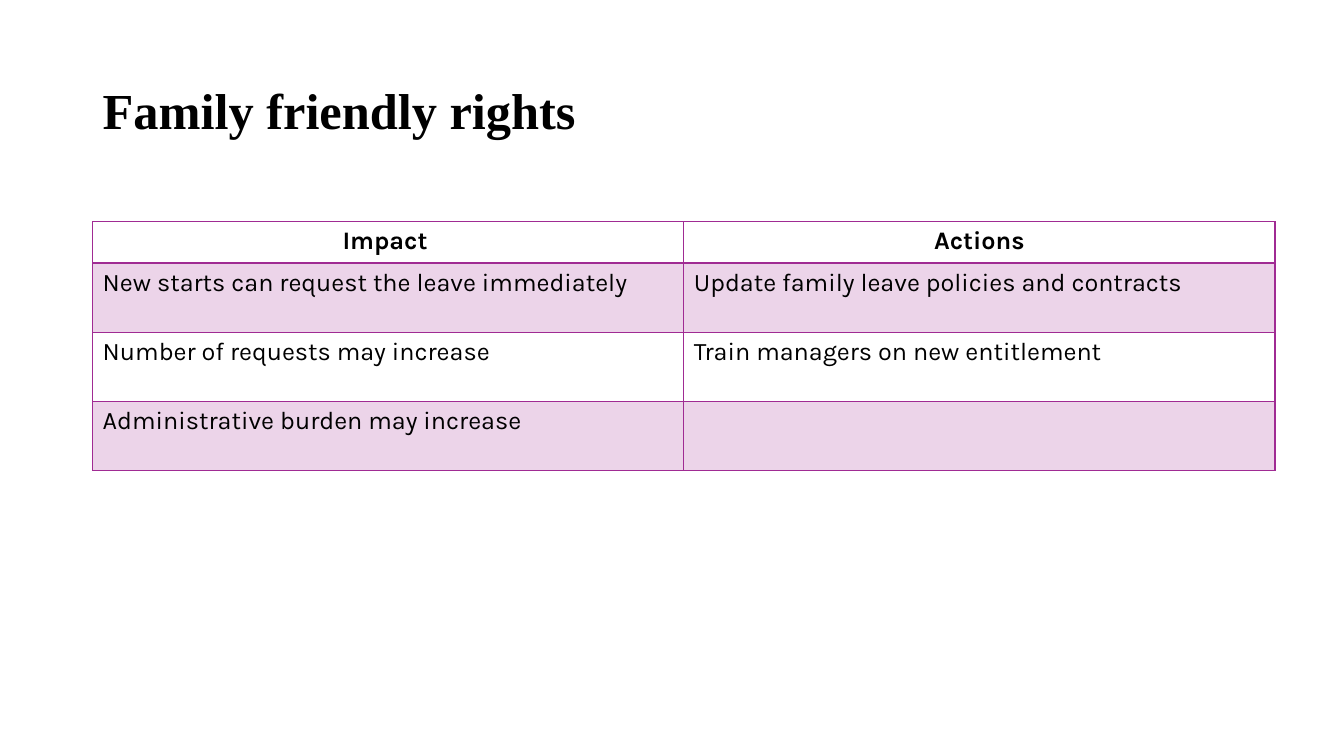
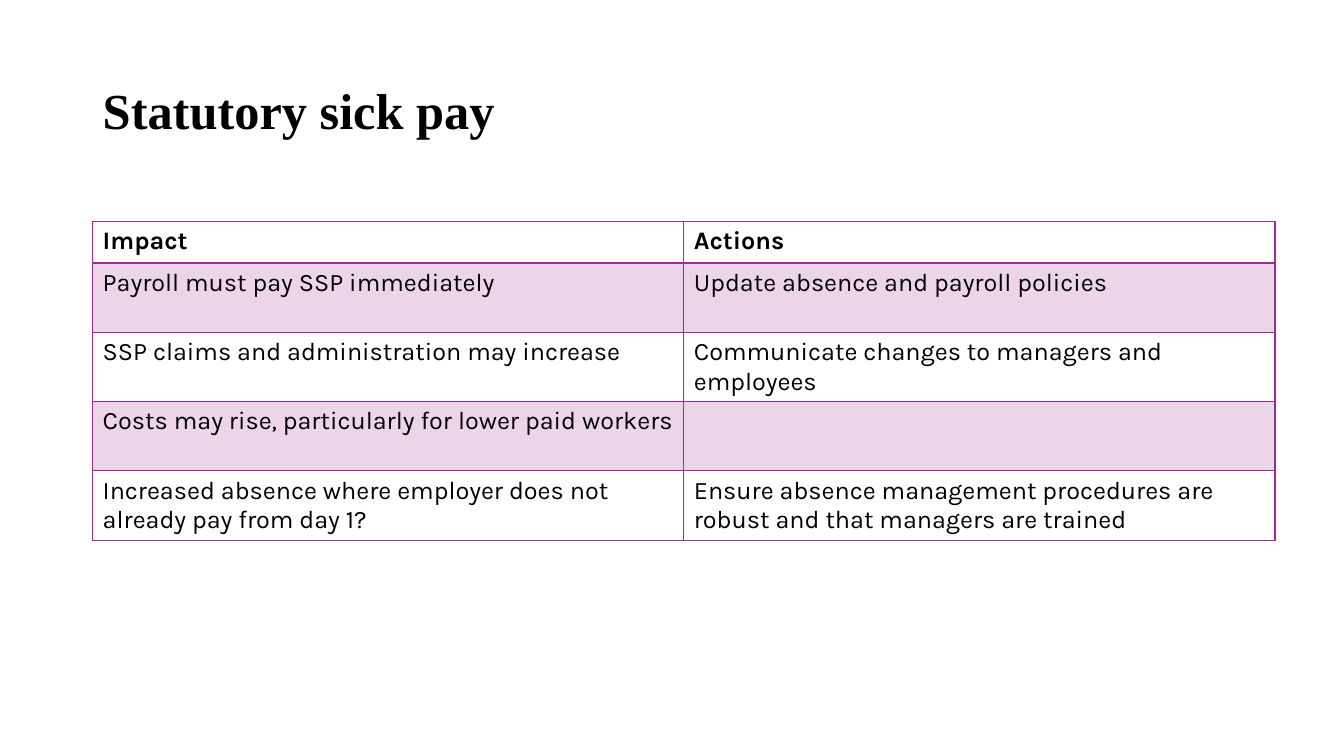
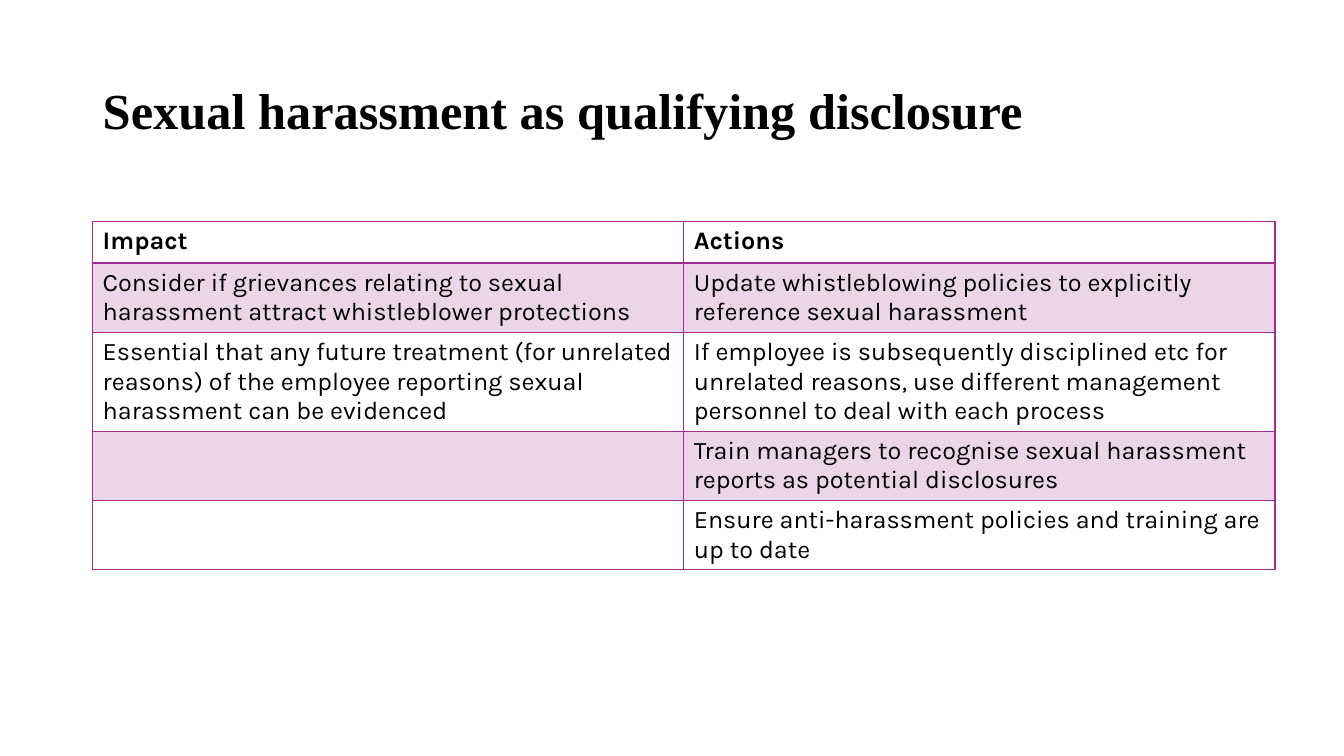
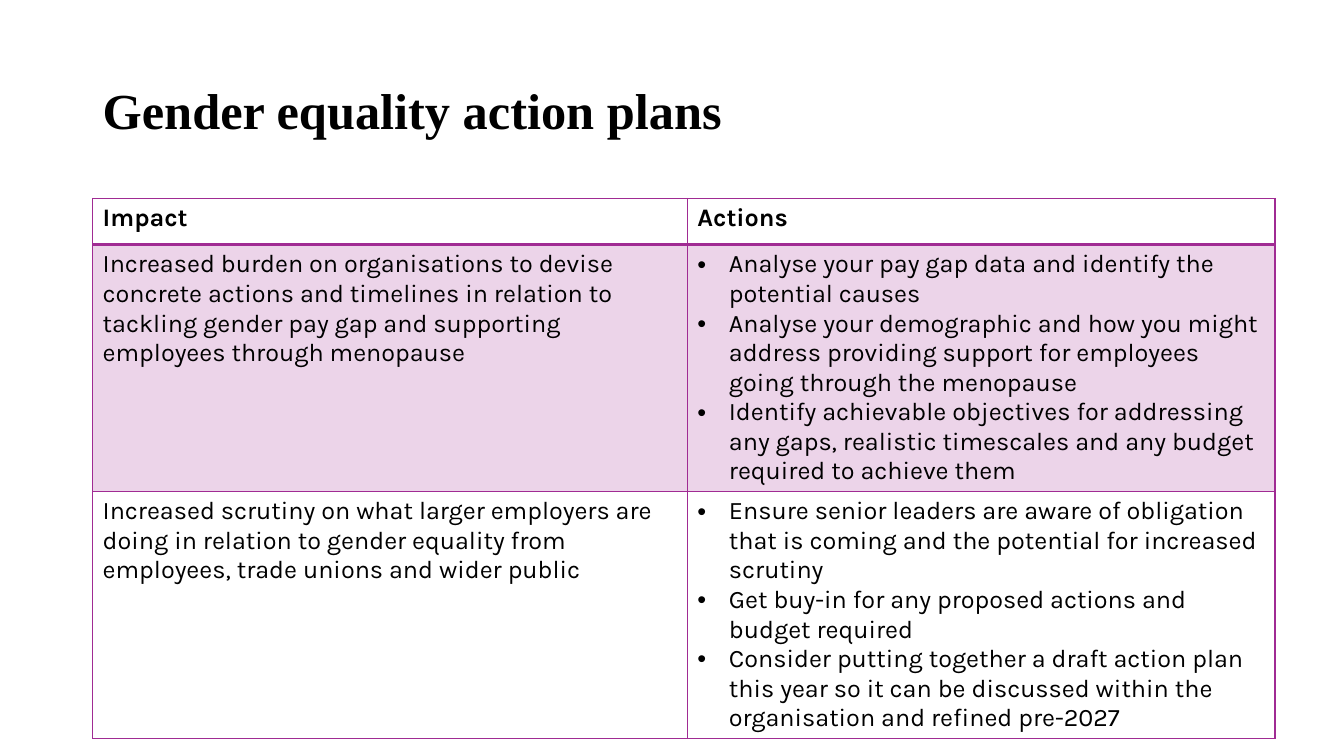
import dataclasses

import lxml.etree
import pptx
import pptx.dml.color
import pptx.enum.text
import pptx.oxml.ns
import pptx.util

Pt = pptx.util.Pt
RGBColor = pptx.dml.color.RGBColor
Align = pptx.enum.text.PP_ALIGN
Anchor = pptx.enum.text.MSO_ANCHOR
qn = pptx.oxml.ns.qn


@dataclasses.dataclass(frozen=True)
class Theme:
    text: str = "000000"
    accent: str = "A02B93"
    band_opacity: int = 20
    title_font: str = "Times New Roman"
    body_font: str = "Karla"
    title_size: float = 36
    body_size: float = 18
    rule: float = 1
    header_rule: float = 2
    bullet_indent: float = 22.5


THEME = Theme()
TITLE_BOX = {"left": 66.2, "top": 28.8, "width": 844.5, "height": 104.4}
LINE_HEIGHT = 21.15
CELL_PADDING = 7.2

# Content: a cell is a string, or a list of strings for bullets;
# "lines" is the number of text lines each body row makes room for
SLIDES = [
    {
        "title": "Family friendly rights",
        "header": ("Impact ", "Actions"),
        "header_align": Align.CENTER,
        "lines": (2, 2, 2),
        "rows": [
            ("New starts can request the leave immediately",
             "Update family leave policies and contracts"),
            ("Number of requests may increase",
             "Train managers on new entitlement"),
            ("Administrative burden may increase", ""),
        ],
    },
    {
        "title": "Statutory sick pay",
        "lines": (2, 2, 2, 2),
        "rows": [
            ("Payroll must pay SSP immediately",
             "Update absence and payroll policies"),
            ("SSP claims and administration may increase",
             "Communicate changes to managers and employees"),
            ("Costs may rise, particularly for lower paid workers", ""),
            ("Increased absence where employer does not already pay from day 1?",
             "Ensure absence management procedures are robust and that managers are trained"),
        ],
    },
    {
        "title": "Sexual harassment as qualifying disclosure",
        "lines": (2, 3, 2, 2),
        "rows": [
            ("Consider if grievances relating to sexual harassment attract "
             "whistleblower protections",
             "Update whistleblowing policies to explicitly reference sexual harassment"),
            ("Essential that any future treatment (for unrelated reasons) of the "
             "employee reporting sexual harassment can be evidenced",
             "If employee is subsequently disciplined etc for unrelated reasons, use "
             "different management personnel to deal with each process"),
            ("", "Train managers to recognise sexual harassment reports as "
                 "potential disclosures"),
            ("", "Ensure anti-harassment policies and training are up to date"),
        ],
    },
    {
        "title": "Gender equality action plans",
        "top": 141.8,
        "columns": (424.8, 419.7),
        "header_height": 33,
        "lines": (8, 8),
        "rows": [
            ("Increased burden on organisations to devise concrete actions and "
             "timelines in relation to tackling gender pay gap and supporting "
             "employees through menopause",
             ["Analyse your pay gap data and identify the potential causes",
              "Analyse your demographic and how you might address providing support "
              "for employees going through the menopause",
              "Identify achievable objectives for addressing any gaps, realistic "
              "timescales and any budget required to achieve them"]),
            ("Increased scrutiny on what larger employers are doing in relation to "
             "gender equality from employees, trade unions and wider public",
             ["Ensure senior leaders are aware of obligation that is coming and the "
              "potential for increased scrutiny",
              "Get buy-in for any proposed actions and budget required",
              "Consider putting together a draft action plan this year so it can be "
              "discussed within the organisation and refined pre-2027"]),
        ],
    },
]

TABLE_DEFAULTS = {
    "top": 158.4,
    "columns": (422.25, 422.25),
    "header": ("Impact", "Actions"),
    "header_align": Align.LEFT,
    "header_height": 29.5,
}


def format_font(font, **values):
    for name, value in values.items():
        setattr(font, name, value)
    font.color.rgb = RGBColor.from_string(THEME.text)


def add_bullet(paragraph):
    properties = paragraph._p.get_or_add_pPr()
    indent = Pt(THEME.bullet_indent)
    properties.set("marL", str(indent))
    properties.set("indent", str(-indent))
    lxml.etree.SubElement(properties, qn("a:buFont"), typeface="Arial")
    lxml.etree.SubElement(properties, qn("a:buChar"), char="•")


def add_borders(cell, top, bottom):
    properties = cell._tc.get_or_add_tcPr()
    widths = {"lnL": THEME.rule, "lnR": THEME.rule, "lnT": top, "lnB": bottom}
    for side, width in widths.items():
        line = lxml.etree.SubElement(properties, qn("a:" + side), w=str(Pt(width)))
        fill = lxml.etree.SubElement(line, qn("a:solidFill"))
        lxml.etree.SubElement(fill, qn("a:srgbClr"), val=THEME.accent)


def fill_band(cell):
    cell.fill.solid()
    cell.fill.fore_color.rgb = RGBColor.from_string(THEME.accent)
    color = cell._tc.tcPr.find(qn("a:solidFill")).find(qn("a:srgbClr"))
    lxml.etree.SubElement(color, qn("a:alpha"), val=str(THEME.band_opacity * 1000))


def write_cell(cell, content, bold, align):
    bulleted = isinstance(content, list)
    frame = cell.text_frame
    frame.text = "\n".join(content) if bulleted else content
    for paragraph in frame.paragraphs:
        paragraph.alignment = align
        if bulleted:
            add_bullet(paragraph)
        for run in paragraph.runs:
            format_font(run.font, name=THEME.body_font, size=Pt(THEME.body_size), bold=bold)


def add_title(slide, text):
    frame = slide.shapes.title.text_frame
    frame.text = text
    frame.vertical_anchor = Anchor.MIDDLE
    frame.auto_size = pptx.enum.text.MSO_AUTO_SIZE.NONE
    paragraph = frame.paragraphs[0]
    paragraph.alignment = Align.LEFT
    paragraph.line_spacing = 0.9
    format_font(paragraph.runs[0].font, name=THEME.title_font,
                size=Pt(THEME.title_size), bold=True)


def add_impact_table(slide, content):
    rows = [content["header"], *content["rows"]]
    heights = [content["header_height"]]
    heights += [count * LINE_HEIGHT + CELL_PADDING for count in content["lines"]]
    columns = content["columns"]
    table = slide.shapes.add_table(
        len(rows), len(columns), Pt(TITLE_BOX["left"]), Pt(content["top"]),
        Pt(sum(columns)), Pt(sum(heights))).table
    table.horz_banding = False
    for column, width in zip(table.columns, columns):
        column.width = Pt(width)
    for index, (row, height) in enumerate(zip(table.rows, heights)):
        row.height = Pt(height)
        is_header = index == 0
        for cell, text in zip(row.cells, rows[index]):
            write_cell(cell, text, is_header,
                       content["header_align"] if is_header else Align.LEFT)
            add_borders(cell,
                        top=THEME.header_rule if index == 1 else THEME.rule,
                        bottom=THEME.header_rule if is_header else THEME.rule)
            if index % 2:
                fill_band(cell)
            else:
                cell.fill.background()


def main():
    presentation = pptx.Presentation()
    presentation.slide_width = Pt(960)
    presentation.slide_height = Pt(540)

    # Shared title position
    layout = presentation.slide_layouts[5]
    for name, value in TITLE_BOX.items():
        setattr(layout.placeholders[0], name, Pt(value))

    for content in SLIDES:
        slide = presentation.slides.add_slide(layout)
        add_title(slide, content["title"])
        add_impact_table(slide, {**TABLE_DEFAULTS, **content})
    presentation.save("out.pptx")


if __name__ == "__main__":
    main()
